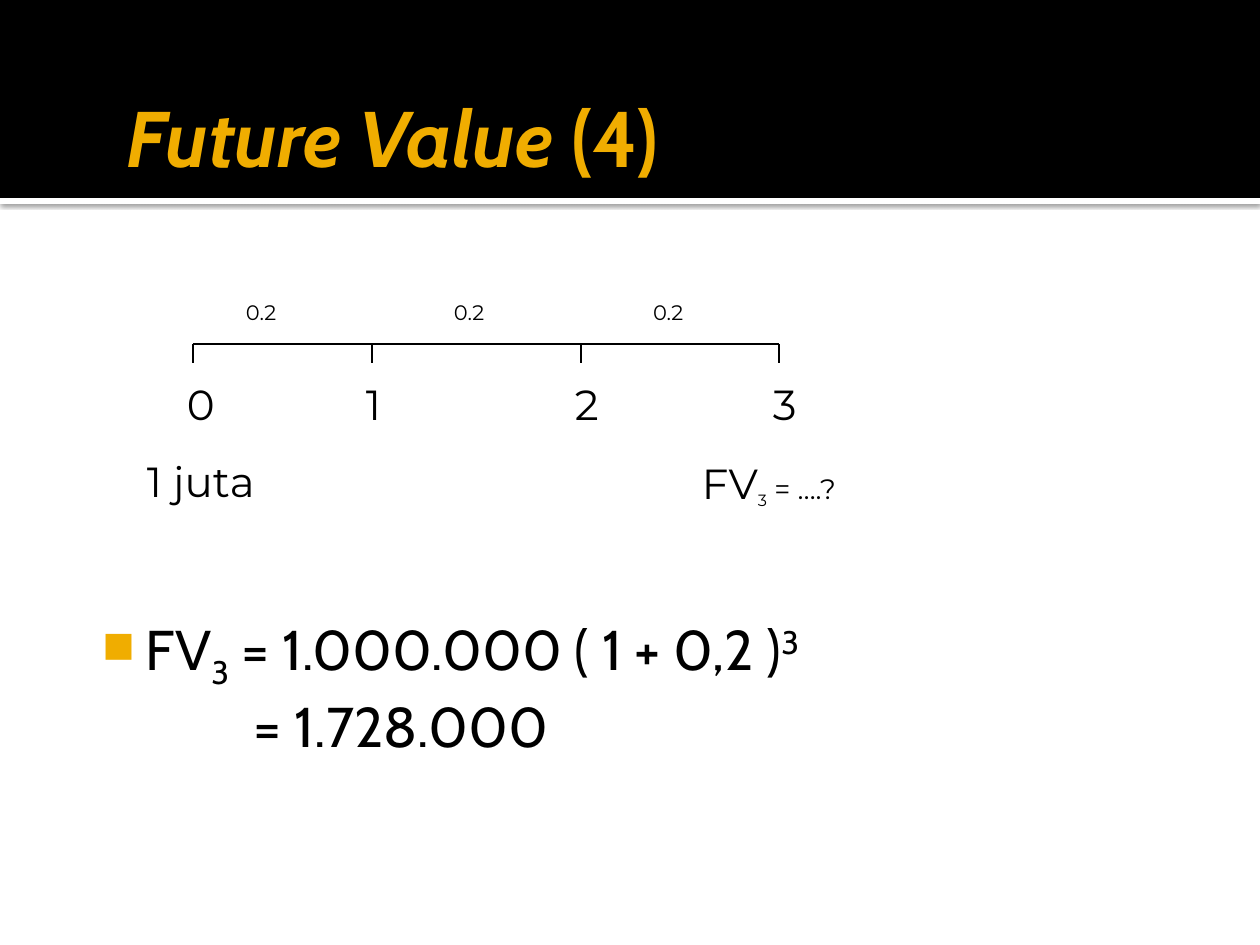
from pptx import Presentation
from pptx.dml.color import RGBColor
from pptx.enum.shapes import MSO_CONNECTOR, MSO_SHAPE
from pptx.enum.text import MSO_ANCHOR, MSO_AUTO_SIZE, PP_ALIGN
from pptx.oxml.ns import qn
from pptx.util import Emu, Pt
from lxml.etree import SubElement

BLACK = RGBColor(0, 0, 0)
WHITE = RGBColor(255, 255, 255)
AMBER = RGBColor(0xF0, 0xAD, 0x00)
EMU_PER_PX = 914400 / 126


def px(*lengths):
    return [Emu(round(length * EMU_PER_PX)) for length in lengths]


class SlideWriter:
    heading_font = "Cabin"
    label_font = "Montserrat"

    def __init__(self, slide):
        self.slide = slide
        self.shapes = slide.shapes

    def run(self, paragraph, text, size, font, color=BLACK, bold=False, italic=False, baseline=0):
        run = paragraph.add_run()
        run.text = text
        run.font.size = Pt(size)
        run.font.name = font
        run.font.bold = bold
        run.font.italic = italic
        run.font.color.rgb = color
        if baseline:
            run.font._element.set("baseline", str(baseline * 1000))

    def frame(self, shape, margins, anchor=MSO_ANCHOR.TOP):
        frame = shape.text_frame
        frame.word_wrap = True
        frame.auto_size = MSO_AUTO_SIZE.NONE
        frame.vertical_anchor = anchor
        (frame.margin_left, frame.margin_top,
         frame.margin_right, frame.margin_bottom) = px(*margins)
        return frame

    def title(self, box, words, suffix):
        title = self.shapes.title
        title.left, title.top, title.width, title.height = px(*box)
        title.element.getparent().append(title.element)
        heading = self.frame(title, (13, 6, 6, 6), MSO_ANCHOR.MIDDLE).paragraphs[0]
        heading.alignment = PP_ALIGN.LEFT
        self.run(heading, words, 45, self.heading_font, AMBER, bold=True, italic=True)
        self.run(heading, suffix, 45, self.heading_font, AMBER, bold=True)

    def band(self, box, color, shadowed=False):
        band = self.shapes.add_shape(MSO_SHAPE.RECTANGLE, *px(*box))
        band.fill.solid()
        band.fill.fore_color.rgb = color
        band.line.fill.background()
        band.shadow.inherit = False
        if shadowed:
            effects = band.element.spPr.find(qn("a:effectLst"))
            shadow = SubElement(effects, qn("a:outerShdw"), blurRad=str(Pt(2.5)),
                                dist=str(Pt(0.8)), dir="5400000", rotWithShape="0")
            tint = SubElement(shadow, qn("a:srgbClr"), val=str(BLACK))
            SubElement(tint, qn("a:alpha"), val="60000")

    def line(self, x1, y1, x2, y2):
        line = self.shapes.add_connector(MSO_CONNECTOR.STRAIGHT, *px(x1, y1, x2, y2))
        line.line.color.rgb = BLACK
        line.line.width = Pt(0.75)
        SubElement(line.element.spPr, qn("a:effectLst"))

    def label(self, box, *pieces):
        label = self.shapes.add_textbox(*px(*box))
        paragraph = self.frame(label, (13, 6, 13, 6)).paragraphs[0]
        for text, size, baseline in pieces:
            self.run(paragraph, text, size, self.label_font, baseline=baseline)

    def formula(self, box, steps, result, result_indent):
        formula = self.shapes.add_textbox(*px(*box))
        frame = self.frame(formula, (8, 13, 13, 6))
        first = frame.paragraphs[0]
        self.indent(first, 60, -44)
        properties = first._p.get_or_add_pPr()
        bullet_color = SubElement(properties, qn("a:buClr"))
        SubElement(bullet_color, qn("a:srgbClr"), val=str(AMBER))
        SubElement(properties, qn("a:buSzPct"), val="80000")
        SubElement(properties, qn("a:buChar"), char="■")
        for text, baseline in steps:
            self.run(first, text, 32, self.heading_font, baseline=baseline)
        second = frame.add_paragraph()
        self.indent(second, result_indent, 0)
        self.run(second, result, 32, self.heading_font)

    def indent(self, paragraph, margin, first_line):
        properties = paragraph._p.get_or_add_pPr()
        margin_emu, first_line_emu = px(margin, first_line)
        properties.set("marL", str(margin_emu))
        properties.set("indent", str(first_line_emu))


def main():
    presentation = Presentation()
    presentation.slide_width, presentation.slide_height = px(1260, 945)
    writer = SlideWriter(presentation.slides.add_slide(presentation.slide_layouts[5]))

    writer.band((0, 198, 1260, 6), WHITE, shadowed=True)
    writer.band((0, 0, 1260, 198), BLACK)
    writer.title((113, 35, 1071, 202), "Future Value", " (4)")
    writer.formula(
        (78, 602, 1103, 227),
        [("FV", 0), ("3", -25), (" = 1.000.000 ( 1 + 0,2 )", 0), ("3", 30)],
        "= 1.728.000", 168)

    periods = [193, 372, 581, 779]
    axis_top = 344
    writer.line(periods[0], axis_top, periods[-1], axis_top)
    for period, tick in enumerate(periods):
        writer.line(tick, axis_top, tick, axis_top + 19)
        writer.label((tick - 19, 373, 40, 50), (str(period), 24, 0))
    for rate_left in (233, 441, 640):
        writer.label((rate_left, 294, 79, 38), ("0.2", 12, 0))
    writer.label((134, 450, 179, 63), ("1 juta", 24, 0))
    writer.label((689, 452, 198, 50), ("FV", 24, 0), ("3", 16, -25), (" = ….?", 16, 0))

    presentation.save("out.pptx")


if __name__ == "__main__":
    main()
